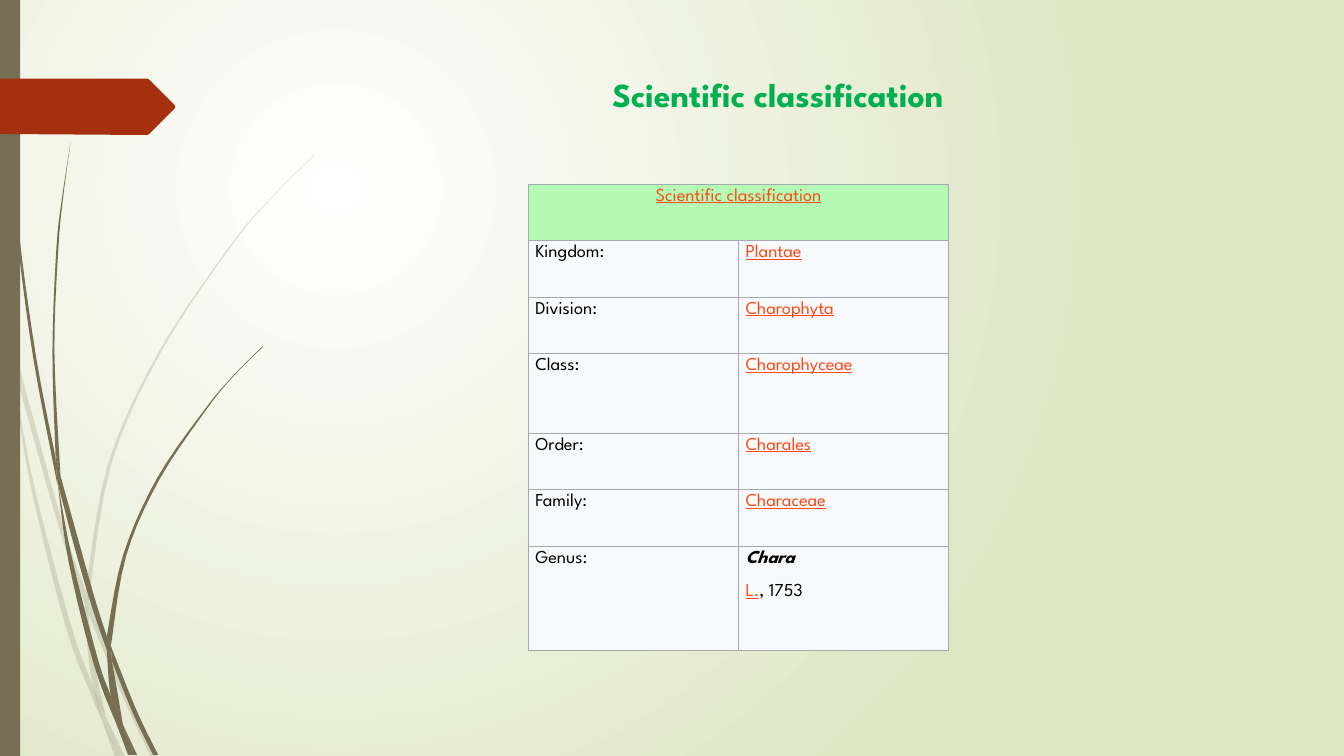
"""Build the Scientific classification slide."""
from lxml import etree
from pptx import Presentation, util as u
from pptx.dml.color import RGBColor
from pptx.enum import shapes, text
from pptx.oxml import ns

COLORS = {
    "white": "FFFFFF", "sage": "DFE6C4", "olive": "766F54", "rust": "A53010",
    "green": "00B050", "mint": "B4FAB4", "pale": "F8F9FA", "grid": "A2A9B1",
    "link": "FB4A18", "ink": "000000",
}
LINK = {"color": "link", "underline": True}
PLAIN = {"color": "ink"}
GENUS = {"color": "ink", "bold": True, "italic": True}

PALE_BLADES = [
    ([(.11, 3.5), (.09, 3.22), (0, 2.82)], [(0, 2.99), (.1, 3.44), (.11, 3.5)]),
    ([(.17, 3.76), (.58, 5.22), (.84, 5.99)], [(.85, 5.86), (.62, 5.2), (.14, 3.45)]),
    ([(1.55, 7.51), (1.27, 6.92), (.88, 5.96)], [(.88, 6.1), (1.23, 6.94), (1.5, 7.51)]),
    ([(1.19, 7.51)], [(1.24, 7.51), (1.05, 7.11)]),
    ([(1.01, 7.14), (.93, 6.83), (.7, 6.19), (.31, 4.69), (.11, 3.5)],
     [(.11, 3.5), (.28, 4.7), (.65, 6.21), (.92, 6.93), (1.01, 7.14)]),
    ([(.84, 5.99), (.87, 6.46), (.93, 6.83), (1.05, 7.11)],
     [(1.05, 7.11), (.91, 6.46), (.88, 6.1), (.84, 5.99)]),
    ([(.88, 5.96), (1.1, 4.62), (1.6, 3.49), (2.29, 2.45), (2.68, 1.98), (3.12, 1.54)],
     [(3.12, 1.53), (2.68, 1.97), (2.28, 2.44), (1.58, 3.48), (1.07, 4.61), (.85, 5.86)]),
    ([(1.01, 7.14), (1.14, 7.51)], [(1.19, 7.51)]),
    ([(.85, 5.86), (.84, 5.99)], [(.88, 6.1), (.88, 5.96)]),
    ([(.93, 6.83), (1.01, 7.14), (1.19, 7.51)], [(1.19, 7.51), (1.05, 7.11), (.93, 6.83)]),
]
DARK_BLADES = [
    ([(.03, 0), (.04, .48), (.07, 1.1), (.17, 2.33), (.33, 3.55), (.57, 4.81)],
     [(.55, 4.53), (.36, 3.55), (.19, 2.32), (.08, 1.09), (.05, .48), (.04, 0)]),
    ([(.6, 4.72), (.64, 5.05), (.88, 5.92), (1.06, 6.45)],
     [(1.06, 6.31), (.93, 5.9), (.6, 4.72)]),
    ([(1.11, 6.56), (1.32, 7.08), (1.52, 7.49)], [(1.57, 7.49), (1.36, 7.06), (1.1, 6.41)]),
    ([(.57, 4.77), (.68, 5.57), (.93, 6.59), (1.17, 7.22)],
     [(1.17, 7.22), (1.1, 6.91), (.98, 6.57), (.72, 5.56), (.57, 4.77)]),
    ([(.7, 1.41), (.62, 1.93), (.56, 2.45), (.52, 3.49), (.55, 4.49)],
     [(.6, 4.72), (.54, 3.49), (.58, 2.45), (.63, 1.93), (.7, 1.41)]),
    ([(1.22, 7.19), (1.33, 7.49)], [(1.36, 7.49)]),
    ([(.55, 4.49), (.57, 4.77), (.64, 5.05)], [(.64, 5.05), (.6, 4.72)]),
    ([(1.1, 6.41), (1.25, 5.52), (1.58, 4.76), (2.05, 4.06), (2.31, 3.74), (2.61, 3.44)],
     [(2.6, 3.44), (2.31, 3.73), (2.04, 4.05), (1.56, 4.74), (1.22, 5.51), (1.06, 6.31)]),
    ([(1.17, 7.22), (1.27, 7.49)], [(1.31, 7.49)]),
    ([(1.06, 6.45), (1.1, 6.91), (1.22, 7.19)], [(1.22, 7.19), (1.11, 6.56), (1.06, 6.45)]),
    ([(1.06, 6.31), (1.06, 6.45)], [(1.11, 6.56), (1.1, 6.41)]),
    ([(1.1, 6.91), (1.17, 7.22), (1.3, 7.49)], [(1.33, 7.49), (1.22, 7.19), (1.1, 6.91)]),
]
ARROW = [(0, .78), (1.46, .78), (1.48, .79), (1.73, 1.04), (1.74, 1.06),
         (1.73, 1.08), (1.48, 1.33), (1.46, 1.34), (0, 1.33)]
RANKS = [("Kingdom:", "Plantae"), ("Division:", "Charophyta"), ("Class:", "Charophyceae"),
         ("Order:", "Charales"), ("Family:", "Characeae")]
ROW_HEIGHTS = [.56, .56, .56, .79, .56, .56, 1.03]


def inch(value):
    return u.Cm(value * 2.54)


def rgb(name):
    return RGBColor.from_string(COLORS[name])


def smooth(edge, steps=5):
    curve = []
    padded = [edge[0], *edge, edge[-1]]
    for a, b, c, d in zip(padded, padded[1:], padded[2:], padded[3:]):
        for step in range(steps):
            t = step / steps
            curve.append(tuple(
                q + t * (r - p) / 2 + t**2 * (2*p - 5*q + 4*r - s) / 2
                + t**3 * (3*q - p - 3*r + s) / 2
                for p, q, r, s in zip(a, b, c, d)))
    return curve + [edge[-1]]


class Sheet:
    def __init__(self, slide, face="League Spartan"):
        self.slide, self.face = slide, face

    def backdrop(self):
        fill = self.slide.background.fill
        fill.gradient()
        for stop, color, position in zip(fill.gradient_stops, ("white", "sage"), (0, 1)):
            stop.color.rgb, stop.position = rgb(color), position
        gradient = self.slide.element.find(".//" + ns.qn("a:gradFill"))
        gradient.remove(gradient.find(ns.qn("a:lin")))
        radial = etree.SubElement(gradient, ns.qn("a:path"), {"path": "circle"})
        etree.SubElement(radial, ns.qn("a:fillToRect"),
                         l="25000", t="25000", r="75000", b="75000")

    def paint(self, shape, color, opacity=100):
        shape.shadow.inherit = False
        shape.fill.solid()
        shape.fill.fore_color.rgb = rgb(color)
        shape.line.fill.background()
        if opacity < 100:
            tone = shape.element.spPr.find(".//" + ns.qn("a:srgbClr"))
            etree.SubElement(tone, ns.qn("a:alpha"), val=str(opacity * 1000))

    def outline(self, points, color, opacity=100):
        start, *rest = [(inch(x), inch(y)) for x, y in points]
        builder = self.slide.shapes.build_freeform(*start, scale=1.0)
        builder.add_line_segments(rest, close=True)
        self.paint(builder.convert_to_shape(), color, opacity)

    def rectangle(self, left, top, width, height, color):
        bar = self.slide.shapes.add_shape(
            shapes.MSO_SHAPE.RECTANGLE, *map(inch, (left, top, width, height)))
        self.paint(bar, color)

    def add_runs(self, paragraph, runs, size, align=text.PP_ALIGN.LEFT):
        paragraph.alignment = align
        for words, style in runs:
            run = paragraph.add_run()
            run.text = words
            values = {"name": self.face, "size": u.Pt(size), "bold": False, **style}
            run.font.color.rgb = rgb(values.pop("color"))
            for key, value in values.items():
                setattr(run.font, key, value)

    def title(self, words):
        box = self.slide.shapes.add_textbox(*map(inch, (2.84, .68, 9.75, 1.4)))
        box.text_frame.word_wrap = True
        self.add_runs(box.text_frame.paragraphs[0],
                      [(words, {"color": "green", "bold": True})], 24, text.PP_ALIGN.CENTER)

    def cell(self, cell, paragraphs, color="pale", align=text.PP_ALIGN.LEFT):
        margins = {"left": .07, "top": .04, "right": .07, "bottom": .04}
        for side, margin in margins.items():
            setattr(cell, "margin_" + side, inch(margin))
        properties = cell._tc.get_or_add_tcPr()
        for side in "LRTB":
            border = etree.SubElement(properties, ns.qn("a:ln" + side), w=str(u.Pt(.75)))
            solid = etree.SubElement(border, ns.qn("a:solidFill"))
            etree.SubElement(solid, ns.qn("a:srgbClr"), val=COLORS["grid"])
        cell.fill.solid()
        cell.fill.fore_color.rgb = rgb(color)
        for index, runs in enumerate(paragraphs):
            paragraph = cell.text_frame.paragraphs[0]
            if index:
                paragraph = cell.text_frame.add_paragraph()
                paragraph.space_before = u.Pt(12)
            self.add_runs(paragraph, runs, 13, align)

    def classification(self, heading, rows):
        frame = self.slide.shapes.add_table(
            len(ROW_HEIGHTS), 2, *map(inch, (5.24, 1.83, 4.17, sum(ROW_HEIGHTS))))
        table = frame.table
        for row, height in zip(table.rows, ROW_HEIGHTS):
            row.height = inch(height)
        table.cell(0, 0).merge(table.cell(0, 1))
        self.cell(table.cell(0, 0), [[(heading, LINK)]], "mint", text.PP_ALIGN.CENTER)
        self.cell(table.cell(0, 1), [], "mint")
        for index, (rank, taxon) in enumerate(rows, 1):
            self.cell(table.cell(index, 0), [[(rank, PLAIN)]])
            self.cell(table.cell(index, 1), taxon)


def main():
    deck = Presentation()
    deck.slide_width, deck.slide_height = inch(13.33), inch(7.5)
    sheet = Sheet(deck.slides.add_slide(deck.slide_layouts[6]))
    sheet.backdrop()
    for blades, opacity in ((PALE_BLADES, 20), (DARK_BLADES, 100)):
        for near, far in blades:
            sheet.outline(smooth(near) + smooth(far), "olive", opacity)
    sheet.rectangle(0, 0, .2, 7.5, "olive")
    sheet.outline(ARROW, "rust")
    sheet.title("Scientific classification")
    rows = [(rank, [[(taxon, LINK)]]) for rank, taxon in RANKS]
    rows.append(("Genus:", [[("Chara", GENUS)], [("L.", LINK), (", 1753", PLAIN)]]))
    sheet.classification("Scientific classification", rows)
    deck.save("out.pptx")


if __name__ == "__main__":
    main()
